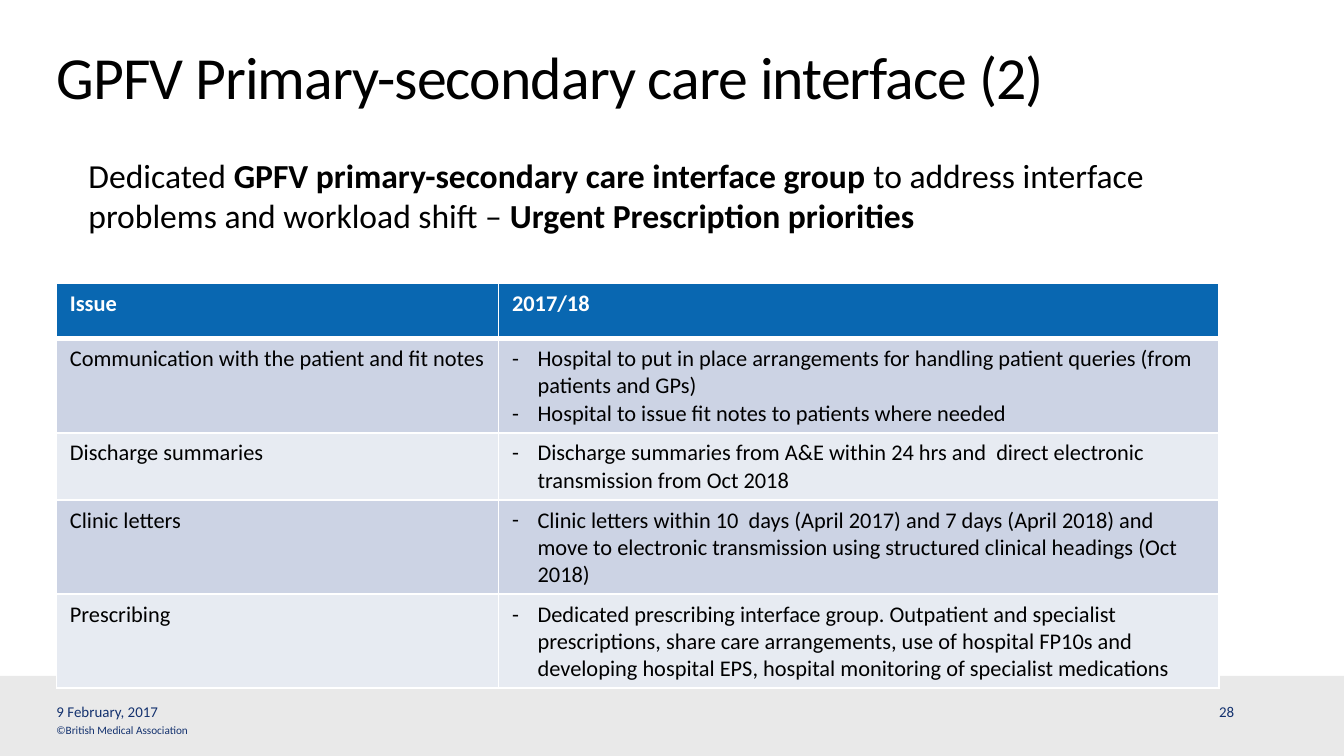
from lxml.etree import SubElement
from pptx import Presentation
from pptx.dml.color import RGBColor
from pptx.enum.shapes import MSO_SHAPE as Shape
from pptx.enum.text import MSO_ANCHOR as Anchor, MSO_AUTO_SIZE as AutoSize, PP_ALIGN as Align
from pptx.oxml import parse_xml
from pptx.oxml.ns import nsdecls, qn
from pptx.util import Inches, Pt


def color(hex_string):
    return RGBColor.from_string(hex_string)


def add_run(paragraph, text, size, hex_string, bold=False):
    run = paragraph.add_run()
    run.text = text
    formats = {"name": "Calibri", "size": Pt(size), "bold": bold}
    for name, value in formats.items():
        setattr(run.font, name, value)
    run.font.color.rgb = color(hex_string)
    return run


NAVY, BLACK, WHITE = "13316E", "000000", "FFFFFF"
HEADER_FILL = "0967B1"
BAND_FILLS = ["E7EBF2", "CCD3E4"]
NO_MARGINS = {"margin_left": 0, "margin_top": 0, "margin_right": 0, "margin_bottom": 0}

presentation = Presentation()
presentation.slide_width = Inches(10)
presentation.slide_height = Inches(10 * 9 / 16)
slide = presentation.slides.add_slide(presentation.slide_layouts[5])

footer_band = slide.shapes.add_shape(
    Shape.RECTANGLE, Inches(0), Inches(5.03), Inches(10), Inches(0.6))
footer_band.shadow.inherit = False
footer_band.fill.solid()
footer_band.fill.fore_color.rgb = color("E9E9E9")
footer_band.line.fill.background()

title = slide.shapes.title
title_box = {"left": 0.42, "top": 0.36, "width": 7.73, "height": 0.54}
for name, value in title_box.items():
    setattr(title, name, Inches(value))
title_format = {**NO_MARGINS, "vertical_anchor": Anchor.TOP,
                "word_wrap": True, "auto_size": AutoSize.NONE}
for name, value in title_format.items():
    setattr(title.text_frame, name, value)
paragraph = title.text_frame.paragraphs[0]
paragraph.alignment = Align.LEFT
paragraph.line_spacing = Pt(34)
title_run = add_run(paragraph, "GPFV Primary-secondary care interface (2)", 32, BLACK)
title_run.font._element.set("spc", "-50")

footers = [
    ("©British Medical Association", 6, 0.42, 5.38, 2.07, 0.1),
    ("9 February, 2017", 8, 0.42, 5.23, 3.17, 0.13),
    ("28", 8, 9.07, 5.23, 0.28, 0.13),
]
footer_format = {**NO_MARGINS, "vertical_anchor": Anchor.MIDDLE,
                 "word_wrap": True, "auto_size": AutoSize.SHAPE_TO_FIT_TEXT}
for text, size, *box in footers:
    footer = slide.shapes.add_textbox(*map(Inches, box))
    for name, value in footer_format.items():
        setattr(footer.text_frame, name, value)
    add_run(footer.text_frame.paragraphs[0], text, size, NAVY)

rows = [
    ("Issue", ["2017/18"]),
    ("Communication with the patient and fit notes", [
        "Hospital to put in place arrangements for handling patient queries (from patients and GPs)",
        "Hospital to issue fit notes to patients where needed"]),
    ("Discharge summaries", [
        "Discharge summaries from A&E within 24 hrs and  direct electronic transmission from Oct 2018"]),
    ("Clinic letters", [
        "Clinic letters within 10  days (April 2017) and 7 days (April 2018) and move to "
        "electronic transmission using structured clinical headings (Oct 2018)"]),
    ("Prescribing", [
        "Dedicated prescribing interface group. Outpatient and specialist prescriptions, "
        "share care arrangements, use of hospital FP10s and developing hospital EPS, "
        "hospital monitoring of specialist medications"]),
]
row_height = 0.41
table = slide.shapes.add_table(
    len(rows), 2, Inches(0.42), Inches(2.11), Inches(8.65), Inches(row_height * len(rows))).table
for column, width in zip(table.columns, [3.29, 5.36]):
    column.width = Inches(width)

for row_index, (issue, actions) in enumerate(rows):
    is_header = row_index == 0
    table.rows[row_index].height = Inches(row_height)
    for column_index, lines in enumerate([[issue], actions]):
        cell = table.cell(row_index, column_index)
        cell.fill.solid()
        cell.fill.fore_color.rgb = color(HEADER_FILL if is_header else BAND_FILLS[row_index % 2])

        cell_properties = cell._tc.get_or_add_tcPr()
        for position, side in enumerate("LRTB"):
            width = 3 if (row_index, side) in [(0, "B"), (1, "T")] else 1
            cell_properties.insert(position, parse_xml(
                f'<a:ln{side} {nsdecls("a")} w="{Pt(width)}"><a:solidFill>'
                f'<a:srgbClr val="{WHITE}"/></a:solidFill></a:ln{side}>'))

        for line_index, line in enumerate(lines):
            frame = cell.text_frame
            paragraph = frame.add_paragraph() if line_index else frame.paragraphs[0]
            if column_index == 1 and not is_header:
                paragraph_properties = paragraph._p.get_or_add_pPr()
                paragraph_properties.set("marL", str(Inches(0.19)))
                paragraph_properties.set("indent", str(-Inches(0.19)))
                SubElement(paragraph_properties, qn("a:buFont"), typeface="Calibri")
                SubElement(paragraph_properties, qn("a:buChar"), char="-")
            add_run(paragraph, line, 12, WHITE if is_header else BLACK, is_header)

introduction = slide.shapes.add_textbox(Inches(0.56), Inches(1.1), Inches(8.72), Inches(0.71))
introduction.text_frame.word_wrap = True
introduction.text_frame.auto_size = AutoSize.SHAPE_TO_FIT_TEXT
introduction_parts = [
    ("Dedicated ", False),
    ("GPFV primary-secondary care interface group ", True),
    ("to address interface problems and workload shift – ", False),
    ("Urgent Prescription priorities", True),
]
for text, bold in introduction_parts:
    add_run(introduction.text_frame.paragraphs[0], text, 18, BLACK, bold)

presentation.save("out.pptx")
